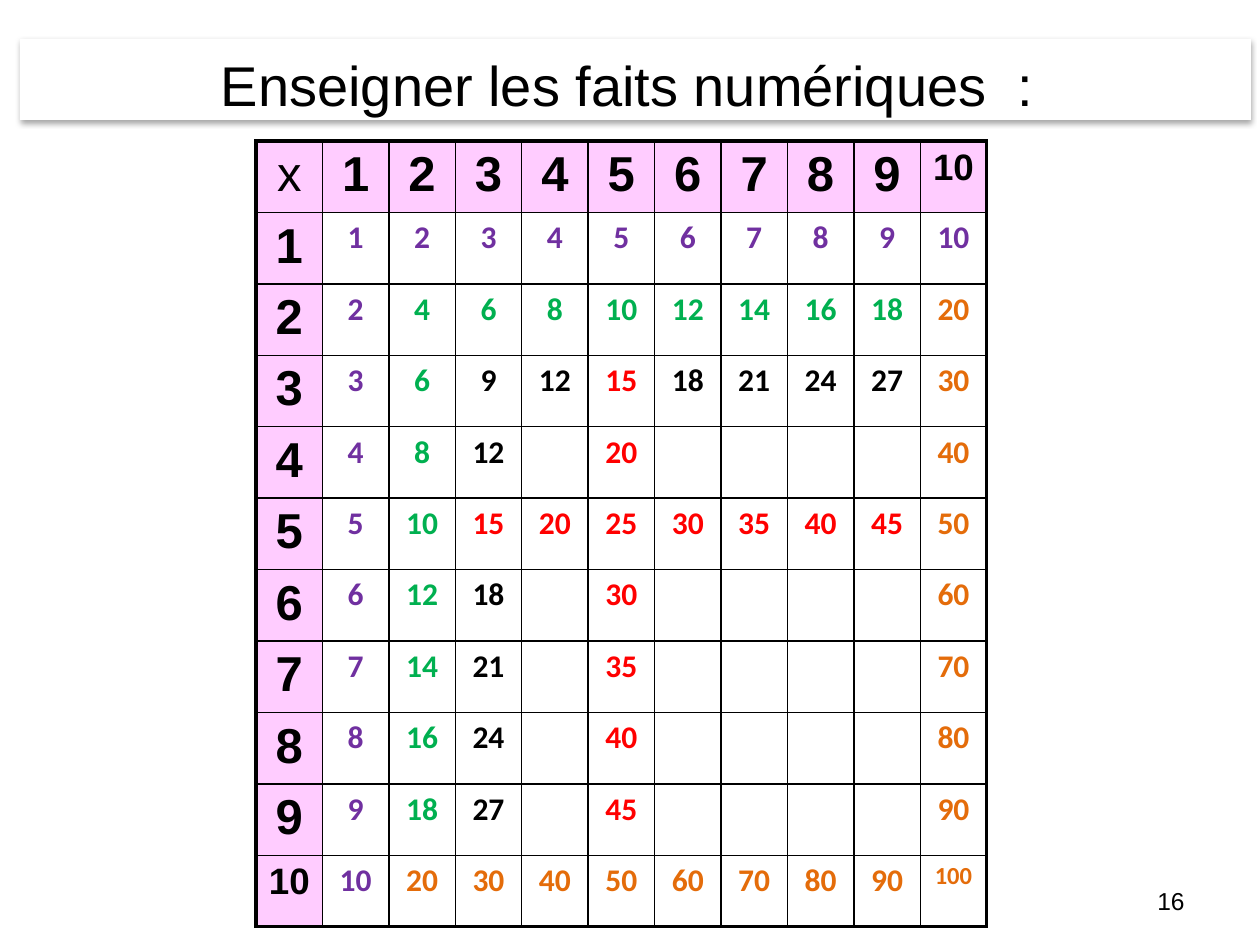
import dataclasses

import pptx
import pptx.dml.color
import pptx.enum.text
import pptx.oxml
import pptx.oxml.ns
import pptx.util

PX = pptx.util.Inches(1) // 126
ALIGN = pptx.enum.text.PP_ALIGN
ANCHOR = pptx.enum.text.MSO_ANCHOR
NS = pptx.oxml.ns.nsdecls("a")


@dataclasses.dataclass(frozen=True)
class Theme:
    # Colours
    ink: str = "000000"
    paper: str = "FFFFFF"
    header: str = "FFCCFF"
    ones: str = "7030A0"
    twos: str = "00B050"
    fives: str = "FF0000"
    tens: str = "E46C0A"
    # Fonts and type sizes
    heading_font: str = "Arial"
    product_font: str = "Calibri"
    title: int = 32
    factor: int = 28
    wide_factor: int = 21
    product: int = 18
    small: int = 14
    # Line widths
    inner_line: float = 1
    outer_line: float = 2.25


class SlideBuilder:
    def __init__(self, slide, theme):
        self.slide = slide
        self.theme = theme

    def rgb(self, value):
        return pptx.dml.color.RGBColor.from_string(value)

    def text(self, frame, words, align, color, **font):
        paragraph = frame.paragraphs[0]
        paragraph.alignment = align
        run = paragraph.add_run()
        run.text = words
        run.font.color.rgb = self.rgb(color)
        font["size"] = pptx.util.Pt(font["size"])
        for key, value in font.items():
            setattr(run.font, key, value)
        return paragraph

    def place(self, element, *box):
        for key, value in zip(("left", "top", "width", "height"), box):
            setattr(element, key, value * PX)

    def title(self, words, *box):
        banner = self.slide.shapes.title
        self.place(banner, *box)
        banner.fill.solid()
        banner.fill.fore_color.rgb = self.rgb(self.theme.paper)
        banner._element.spPr.append(pptx.oxml.parse_xml(
            f'<a:effectLst {NS}><a:outerShdw blurRad="40000" dist="23000" '
            f'dir="5400000" rotWithShape="0"><a:srgbClr val="{self.theme.ink}">'
            '<a:alpha val="35000"/></a:srgbClr></a:outerShdw></a:effectLst>'))
        frame = banner.text_frame
        layout = {"word_wrap": True, "vertical_anchor": ANCHOR.TOP,
                  "auto_size": pptx.enum.text.MSO_AUTO_SIZE.NONE,
                  "margin_top": 11 * PX, "margin_bottom": 6 * PX}
        for key, value in layout.items():
            setattr(frame, key, value)
        self.text(frame, words, ALIGN.CENTER, self.theme.ink,
                  size=self.theme.title, name=self.theme.heading_font)

    def label(self, words, *box):
        frame = self.slide.shapes.add_textbox(*(v * PX for v in box)).text_frame
        frame.word_wrap = True
        frame.vertical_anchor = ANCHOR.MIDDLE
        self.text(frame, words, ALIGN.RIGHT, self.theme.ink,
                  size=self.theme.small, name=self.theme.heading_font)

    def borders(self, cell, outer_sides):
        properties = cell._tc.get_or_add_tcPr()
        for side in "LRTB":
            points = self.theme.outer_line if side in outer_sides else self.theme.inner_line
            properties.append(pptx.oxml.parse_xml(
                f'<a:ln{side} {NS} w="{pptx.util.Pt(points)}"><a:solidFill>'
                f'<a:srgbClr val="{self.theme.ink}"/></a:solidFill></a:ln{side}>'))

    def factor_cell(self, cell, words):
        cell.fill.solid()
        cell.fill.fore_color.rgb = self.rgb(self.theme.header)
        size = self.theme.wide_factor if words == "10" else self.theme.factor
        return self.text(cell.text_frame, words, ALIGN.CENTER, self.theme.ink, size=size,
                         name=self.theme.heading_font, bold=words != "x")

    def product_cell(self, cell, row, column):
        cell.fill.background()
        # The first known family among the two factors decides the colour
        families = {1: self.theme.ones, 10: self.theme.tens, 2: self.theme.twos,
                    5: self.theme.fives, 3: self.theme.ink}
        color = next((c for f, c in families.items() if f in (row, column)), None)
        if color is None:
            return None
        product = row * column
        size = self.theme.small if product == 100 else self.theme.product
        return self.text(cell.text_frame, str(product), ALIGN.CENTER, color, size=size,
                         name=self.theme.product_font, bold=True)

    def multiplication_table(self, last, *box):
        count = last + 1
        grid = self.slide.shapes.add_table(count, count, *(v * PX for v in box)).table
        grid.first_row = grid.horz_banding = False
        for row in range(count):
            for column in range(count):
                cell = grid.cell(row, column)
                edges = {"L": column == 0, "R": column == last,
                         "T": row == 0, "B": row == last}
                self.borders(cell, [side for side, outer in edges.items() if outer])
                if row and column:
                    paragraph = self.product_cell(cell, row, column)
                else:
                    paragraph = self.factor_cell(cell, str(row + column or "x"))
                if paragraph is not None:
                    paragraph._p.get_or_add_pPr().append(pptx.oxml.parse_xml(
                        f'<a:spcBef {NS}><a:spcPct val="20000"/></a:spcBef>'))


def main():
    deck = pptx.Presentation()
    deck.slide_width, deck.slide_height = 1260 * PX, 945 * PX
    title_only = deck.slide_layouts[5]
    builder = SlideBuilder(deck.slides.add_slide(title_only), Theme())

    # Title banner
    builder.title("Enseigner les faits numériques  : ", 20, 39, 1231, 81)
    # Multiplication table from 1 to 10
    builder.multiplication_table(10, 256, 141, 731, 786)
    # Page number
    builder.label("16", 903, 876, 294, 50)

    deck.save("out.pptx")


if __name__ == "__main__":
    main()
